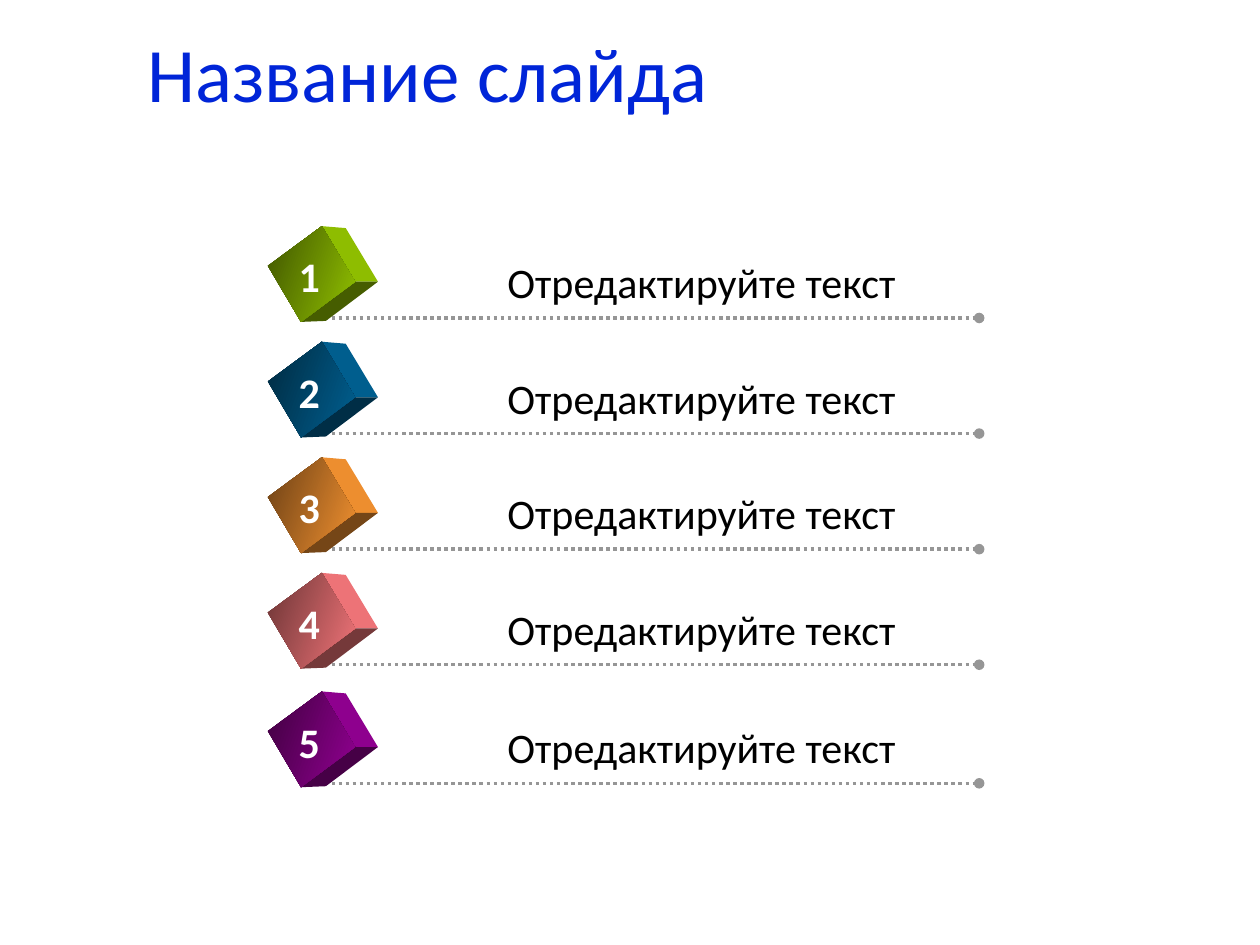
from lxml import etree
from pptx import Presentation
from pptx.dml.color import RGBColor
from pptx.enum.dml import MSO_LINE
from pptx.enum.shapes import MSO_CONNECTOR
from pptx.enum.text import MSO_ANCHOR, MSO_AUTO_SIZE, PP_ALIGN
from pptx.oxml.ns import qn
from pptx.util import Cm, Pt

LEFT = PP_ALIGN.LEFT
MIDDLE, TOP = MSO_ANCHOR.MIDDLE, MSO_ANCHOR.TOP
GROW, FIXED = MSO_AUTO_SIZE.SHAPE_TO_FIT_TEXT, MSO_AUTO_SIZE.NONE
DOTTED, STRAIGHT = MSO_LINE.ROUND_DOT, MSO_CONNECTOR.STRAIGHT

COLORS = {"title": "0025D8", "text": "000000", "number": "FFFFFF", "line": "969696"}
FORMATS = {
    "title": {"size": Pt(44), "bold": False, "name": "Calibri"},
    "text": {"size": Pt(24), "bold": False, "name": "Calibri"},
    "number": {"size": Pt(24), "bold": True, "name": "Calibri"},
}
FRONT = [(-1, -1.05), (0.09, -1.85), (0.76, -0.73), (-0.33, 0.08)]
SIDE = [(0.09, -1.85), (0.57, -1.81), (1.22, -0.73), (0.76, -0.73)]
BASE = [(0.76, -0.73), (1.22, -0.73), (0.17, 0.06), (-0.33, 0.08)]
LINE_LEFT, LINE_RIGHT = 6.4, 19.74
ROWS = [
    (6.41, "99CC00"),
    (8.74, "006699"),
    (11.07, "FF9933"),
    (13.4, "FF7C80"),
    (15.79, "990099"),
]


def shade(color, factor):
    """Return the hex colour darkened by a factor."""
    return RGBColor(*(int(c * factor) for c in RGBColor.from_string(color)))


class SlideBuilder:
    """Hold the style and the current slide."""

    def __init__(self, prs):
        """Add a title-only slide."""
        self.slide = prs.slides.add_slide(prs.slide_layouts[5])
        self.shapes = self.slide.shapes

    def start_group(self):
        """Send the next elements to a new group."""
        self.shapes = self.slide.shapes.add_group_shape().shapes

    def add_words(self, tf, text, style):
        """Put one styled paragraph into a text frame."""
        p = tf.paragraphs[0]
        p.alignment = LEFT
        r = p.add_run()
        r.text = text
        for key, value in FORMATS[style].items():
            setattr(r.font, key, value)
        r.font.color.rgb = RGBColor.from_string(COLORS[style])
        return p

    def title(self, text, left, top, width, height):
        """Place and fill the title."""
        s = self.slide.shapes.title
        box = {"left": left, "top": top, "width": width, "height": height}
        for key, value in box.items():
            setattr(s, key, Cm(value))
        tf = s.text_frame
        tf.vertical_anchor, tf.auto_size = MIDDLE, FIXED
        self.add_words(tf, text, "title").line_spacing = 0.9

    def text(self, text, style, left, top, width, height):
        """Add an unwrapped text box."""
        s = self.shapes.add_textbox(Cm(left), Cm(top), Cm(width), Cm(height))
        tf = s.text_frame
        tf.word_wrap, tf.auto_size, tf.vertical_anchor = False, GROW, TOP
        self.add_words(tf, text, style)

    def dotted_line(self, x1, x2, y):
        """Add a dotted rule that ends in a dot."""
        s = self.shapes.add_connector(STRAIGHT, Cm(x1), Cm(y), Cm(x2), Cm(y))
        s.line.color.rgb = RGBColor.from_string(COLORS["line"])
        s.line.width, s.line.dash_style = Pt(2), DOTTED
        spPr = s._element.spPr
        etree.SubElement(spPr.find(qn("a:ln")), qn("a:tailEnd"), type="oval")
        etree.SubElement(spPr, qn("a:effectLst"))

    def face(self, points, x, y):
        """Add one outline of a cube and return its fill."""
        points = [(Cm(x + dx), Cm(y + dy)) for dx, dy in points]
        builder = self.shapes.build_freeform(*points[0])
        builder.add_line_segments(points[1:])
        s = builder.convert_to_shape()
        s.shadow.inherit = False
        s.line.fill.background()
        return s.fill

    def cube(self, color, x, y):
        """Add a tilted cube with a shaded front."""
        for points, factor in ((SIDE, 0.93), (BASE, 0.46)):
            fill = self.face(points, x, y)
            fill.solid()
            fill.fore_color.rgb = shade(color, factor)
        fill = self.face(FRONT, x, y)
        fill.gradient()
        fill.gradient_angle = 340
        for stop, factor in zip(fill.gradient_stops, (0.42, 0.95)):
            stop.color.rgb = shade(color, factor)

    def row(self, number, y, color):
        """Add a numbered cube, its rule and its text."""
        self.start_group()
        self.dotted_line(LINE_LEFT, LINE_RIGHT, y)
        self.cube(color, LINE_LEFT, y)
        self.text("Отредактируйте текст", "text", 9.98, y - 1.36, 8.41, 1.3)
        self.text(str(number), "number", 5.77, y - 1.48, 0.99, 1.27)


def main():
    """Build and save the slide."""
    prs = Presentation()
    prs.slide_width, prs.slide_height = Cm(25.4), Cm(19.05)
    builder = SlideBuilder(prs)
    builder.title("Название слайда", 2.72, 0.3, 17.81, 2.54)
    for number, (y, color) in enumerate(ROWS, 1):
        builder.row(number, y, color)
    prs.save("out.pptx")


if __name__ == "__main__":
    main()
